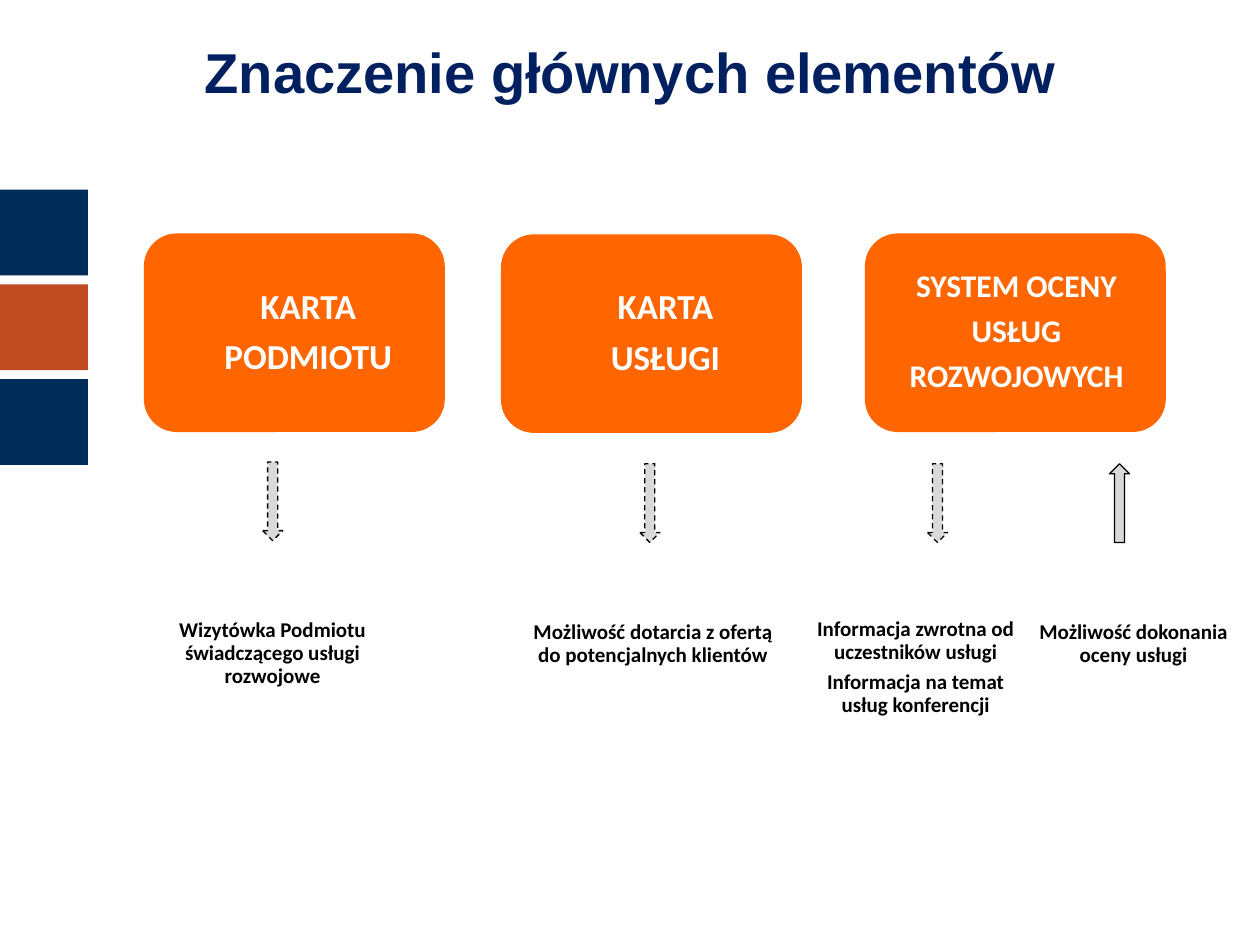
from pptx import Presentation
from pptx.dml.color import RGBColor as Color
from pptx.enum.dml import MSO_LINE_DASH_STYLE as Dash
from pptx.enum.shapes import MSO_AUTO_SHAPE_TYPE as Shape
from pptx.enum.text import MSO_ANCHOR as Anchor, MSO_AUTO_SIZE as AutoSize, PP_ALIGN as Align
from pptx.util import Pt

COLOURS = {
    "navy": "002C5A",
    "rust": "C14B20",
    "orange": "FF6600",
    "grey": "D9D9D9",
    "title": "002060",
    "black": "000000",
    "white": "FFFFFF",
}


class SlideBuilder:
    inset = 4.5
    line_spacing = 0.9
    space_ratio = 0.35

    def __init__(self, slide):
        self.slide = slide

    def colour(self, name):
        return Color.from_string(COLOURS[name])

    def set_values(self, target, values):
        for name, value in values.items():
            setattr(target, name, value)

    def style_font(self, font, name, size, colour):
        self.set_values(font, {"name": name, "size": Pt(size), "bold": True})
        font.color.rgb = self.colour(colour)

    def title(self, text, left, top, width, height):
        box = self.slide.shapes.title
        self.set_values(box, {"left": Pt(left), "top": Pt(top),
                              "width": Pt(width), "height": Pt(height)})
        frame = box.text_frame
        self.set_values(frame, {"auto_size": AutoSize.NONE, "word_wrap": True,
                                "vertical_anchor": Anchor.TOP, "margin_top": Pt(6.5)})
        para = frame.paragraphs[0]
        para.alignment = Align.CENTER
        span = para.add_run()
        span.text = text
        self.style_font(span.font, "Arial", 32.1, "title")

    def shape(self, kind, left, top, width, height, fill):
        box = self.slide.shapes.add_shape(kind, Pt(left), Pt(top), Pt(width), Pt(height))
        box.shadow.inherit = False
        box.fill.solid()
        box.fill.fore_color.rgb = self.colour(fill)
        box.line.fill.background()
        return box

    def arrow(self, kind, left, top, dash=None):
        arrow = self.shape(kind, left, top, 11.5, 45, "grey")
        arrow.adjustments[0] = 0.5
        arrow.adjustments[1] = 0.5
        arrow.line.color.rgb = self.colour("black")
        arrow.line.width = Pt(0.75)
        if dash:
            arrow.line.dash_style = dash

    def text(self, lines, left, top, width, size, colour):
        box = self.slide.shapes.add_textbox(Pt(left), Pt(top), Pt(width), Pt(105))
        frame = box.text_frame
        self.set_values(frame, {"word_wrap": True, "vertical_anchor": Anchor.MIDDLE})
        for side in ("left", "top", "right", "bottom"):
            setattr(frame, f"margin_{side}", Pt(self.inset))
        for index, line in enumerate(lines):
            para = frame.add_paragraph() if index else frame.paragraphs[0]
            self.set_values(para, {"alignment": Align.CENTER,
                                   "line_spacing": self.line_spacing,
                                   "space_after": Pt(size * self.space_ratio)})
            span = para.add_run()
            span.text = line
            self.style_font(span.font, "Calibri", size, colour)

    def card(self, lines, left, top, text_offset, size):
        self.shape(Shape.ROUNDED_RECTANGLE, left, top, 172, 113.5, "orange")
        self.text(lines, left + text_offset, top + 4.25, 155, size, "white")


def main():
    deck = Presentation()
    self_size = {"slide_width": Pt(720), "slide_height": Pt(540)}
    for name, value in self_size.items():
        setattr(deck, name, value)
    page = SlideBuilder(deck.slides.add_slide(deck.slide_layouts[5]))

    for index, colour in enumerate(("navy", "rust", "navy")):
        page.shape(Shape.RECTANGLE, 0, 108.4 + 54.1 * index, 50.2, 49, colour)

    page.title("Znaczenie głównych elementów", 54, 15, 612, 60)

    cards = [
        (["KARTA", "PODMIOTU"], 82.2, 133.4, 16.5, 20),
        (["KARTA", "USŁUGI"], 286.3, 133.9, 16.5, 20),
        (["SYSTEM OCENY", "USŁUG", "ROZWOJOWYCH"], 494.2, 133.4, 9.2, 18),
    ]
    for card in cards:
        page.card(*card)

    for left, top in ((150.1, 264), (365.6, 265), (530, 265)):
        page.arrow(Shape.DOWN_ARROW, left, top, Dash.DASH)
    page.arrow(Shape.UP_ARROW, 634, 265)

    captions = [
        (["Wizytówka Podmiotu świadczącego usługi rozwojowe"], 78.3, 321, 155),
        (["Możliwość dotarcia z ofertą do potencjalnych klientów"], 295.7, 315.5, 155),
        (["Informacja zwrotna od uczestników usługi",
          "Informacja na temat usług konferencji"], 460, 329, 126.5),
        (["Możliwość dokonania oceny usługi"], 584.5, 315.5, 126.5),
    ]
    for lines, left, top, width in captions:
        page.text(lines, left, top, width, 12, "black")

    deck.save("out.pptx")


if __name__ == "__main__":
    main()
